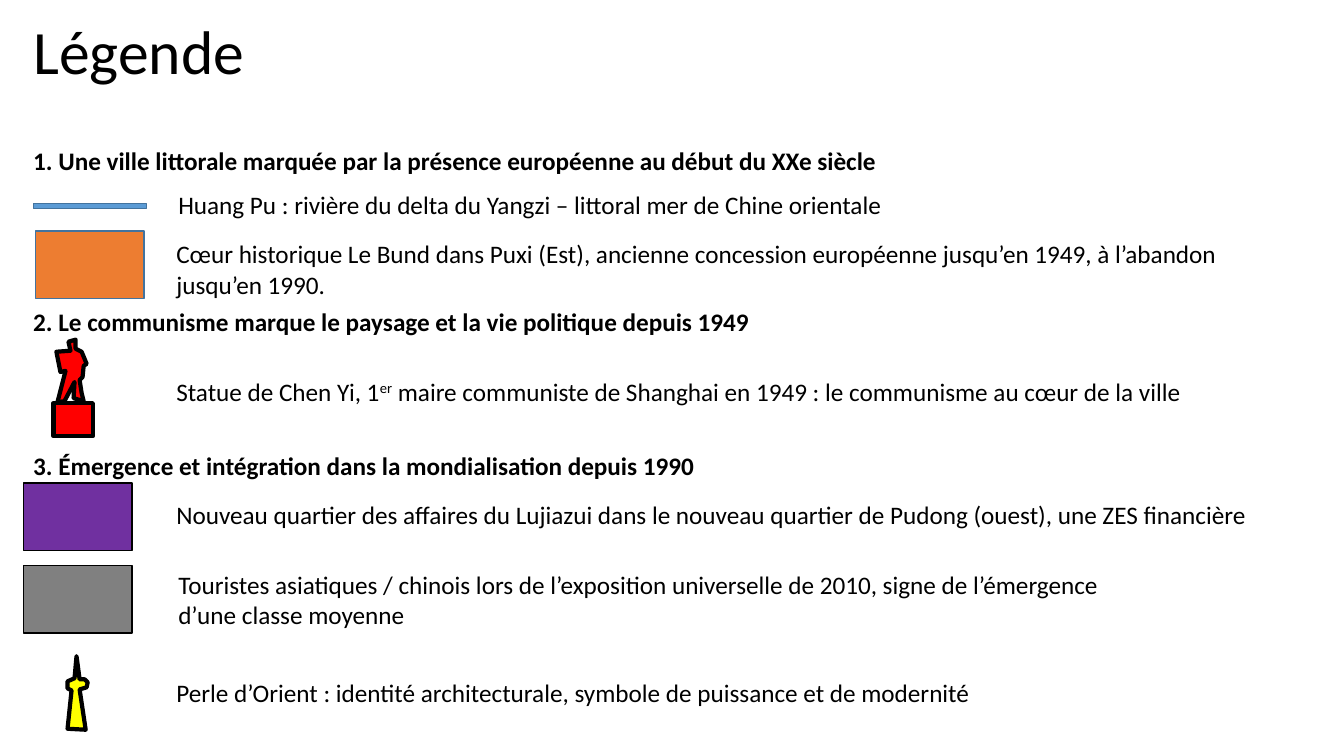
from dataclasses import dataclass

from pptx import Presentation
from pptx.dml.color import RGBColor
from pptx.enum.shapes import MSO_SHAPE as Preset
from pptx.enum.text import MSO_ANCHOR as Anchor, MSO_AUTO_SIZE as AutoSize
from pptx.util import Inches, Pt

# Every length below is a percentage of the slide's width or height.
SLIDE_WIDTH, SLIDE_HEIGHT = Inches(13.333), Inches(7.5)
LEFT, LABEL_LEFT, INDENTED_LEFT = 1.73, 12.38, 12.53
SWATCH_WIDTH, SWATCH_HEIGHT = 8.1, 8.93
ONE_LINE, TWO_LINES = 5.33, 9.47
BLACK, BLUE_EDGE = "000000", "43739E"


@dataclass
class Swatch:
    left: float
    top: float
    fill: str
    edge: str = BLACK
    width: float = SWATCH_WIDTH
    height: float = SWATCH_HEIGHT
    weight: float = 1


@dataclass
class Figure:
    points: list[tuple[float, float]]
    fill: str


@dataclass
class Label:
    text: str
    left: float
    top: float
    width: float
    height: float = ONE_LINE
    bold: bool = False


TOWER = Figure([
    (6.38, 96.53), (5.93, 91.2), (6.45, 90.93), (6.53, 90.27), (6.3, 89.87),
    (5.93, 89.87), (5.7, 86.8), (5.55, 89.73), (5.03, 90.13), (5.03, 91.07),
    (5.33, 91.33), (5.03, 96.4),
], "FFFF00")
STATUE = Figure([
    (4.28, 53.2), (4.88, 49.07), (4.5, 49.2), (4.2, 46.53), (5.25, 46.4),
    (5.1, 45.2), (5.63, 44.93), (5.63, 46.13), (6.08, 46.53), (6.45, 48.13),
    (6.23, 48.4), (6.15, 49.87), (5.93, 50.27), (6.08, 52), (6.23, 53.07),
    (5.48, 52.67), (5.55, 50.53), (4.8, 53.07),
], "FF0000")
PEDESTAL = Swatch(3.98, 53.33, "FF0000", width=2.93, height=4.4, weight=3)

SWATCHES = [
    Swatch(2.63, 30.53, "ED7D31", BLUE_EDGE),
    Swatch(LEFT, 74.8, "808080"),
    Swatch(LEFT, 63.87, "7030A0"),
    Swatch(2.48, 26.93, "5B9BD5", BLUE_EDGE, width=8.4, height=0.67),
]

# A caret pair marks superscript text.
LABELS = [
    Label("1. Une ville littorale marquée par la présence européenne au début du XXe siècle",
          LEFT, 18.53, 67.5, bold=True),
    Label("2. Le communisme marque le paysage et la vie politique depuis 1949",
          LEFT, 39.87, 72.83, bold=True),
    Label("3. Émergence et intégration dans la mondialisation depuis 1990",
          LEFT, 58.93, 53.4, TWO_LINES, bold=True),
    Label("Huang Pu : rivière du delta du Yangzi – littoral mer de Chine orientale",
          INDENTED_LEFT, 24.4, 70),
    Label("Cœur historique Le Bund dans Puxi (Est), ancienne concession européenne "
          "jusqu’en 1949, à l’abandon jusqu’en 1990.",
          LABEL_LEFT, 30.93, 85.65, TWO_LINES),
    Label("Statue de Chen Yi, 1^er^ maire communiste de Shanghai en 1949 : "
          "le communisme au cœur de la ville",
          LABEL_LEFT, 49.07, 82.2),
    Label("Nouveau quartier des affaires du Lujiazui dans le nouveau quartier de Pudong "
          "(ouest), une ZES financière",
          LABEL_LEFT, 65.33, 82.2),
    Label("Touristes asiatiques / chinois lors de l’exposition universelle de 2010, "
          "signe de l’émergence d’une classe moyenne",
          INDENTED_LEFT, 74.67, 73.13, TWO_LINES),
    Label("Perle d’Orient : identité architecturale, symbole de puissance et de modernité",
          LABEL_LEFT, 88.93, 72.53),
]


def across(share: float) -> int:
    return round(SLIDE_WIDTH * share / 100)


def down(share: float) -> int:
    return round(SLIDE_HEIGHT * share / 100)


def color(code: str) -> RGBColor:
    return RGBColor.from_string(code)


def paint(shape, fill: str, edge: str, weight: float) -> None:
    shape.shadow.inherit = False
    shape.fill.solid()
    shape.fill.fore_color.rgb = color(fill)
    shape.line.color.rgb = color(edge)
    shape.line.width = Pt(weight)


def draw_swatch(shapes, swatch: Swatch) -> None:
    box = shapes.add_shape(Preset.RECTANGLE, across(swatch.left), down(swatch.top),
                           across(swatch.width), down(swatch.height))
    paint(box, swatch.fill, swatch.edge, swatch.weight)


def draw_figure(shapes, figure: Figure) -> None:
    start, *others = [(across(x), down(y)) for x, y in figure.points]
    builder = shapes.build_freeform(*start)
    builder.add_line_segments(others, close=True)
    paint(builder.convert_to_shape(), figure.fill, BLACK, 3)


def write(shapes, text: str, *, left: float, top: float, width: float, height: float,
          size: float = 18, bold: bool = False, anchor: Anchor = Anchor.TOP,
          spacing: float = 1.0, grow: bool = True) -> None:
    box = shapes.add_textbox(across(left), down(top), across(width), down(height))
    frame = box.text_frame
    frame.word_wrap = True
    frame.auto_size = AutoSize.SHAPE_TO_FIT_TEXT if grow else AutoSize.NONE
    frame.vertical_anchor = anchor
    para = frame.paragraphs[0]
    para.line_spacing = spacing
    for index, part in enumerate(text.split("^")):
        span = para.add_run()
        span.text = part
        span.font.name = "Calibri"
        span.font.size = Pt(size)
        span.font.bold = bold
        span.font.color.rgb = color(BLACK)
        if index % 2:
            span._r.get_or_add_rPr().set("baseline", "30000")


def main() -> None:
    deck = Presentation()
    deck.slide_width, deck.slide_height = SLIDE_WIDTH, SLIDE_HEIGHT
    page = deck.slides.add_slide(deck.slide_layouts[6])

    write(page.shapes, "Légende", left=LEFT, top=0.93, width=17.5, height=12.53,
          size=44, anchor=Anchor.MIDDLE, spacing=0.9, grow=False)
    draw_figure(page.shapes, TOWER)
    monument = page.shapes.add_group_shape()
    draw_swatch(monument.shapes, PEDESTAL)
    draw_figure(monument.shapes, STATUE)
    for swatch in SWATCHES:
        draw_swatch(page.shapes, swatch)
    for label in LABELS:
        write(page.shapes, label.text, left=label.left, top=label.top,
              width=label.width, height=label.height, bold=label.bold)
    deck.save("out.pptx")


if __name__ == "__main__":
    main()
